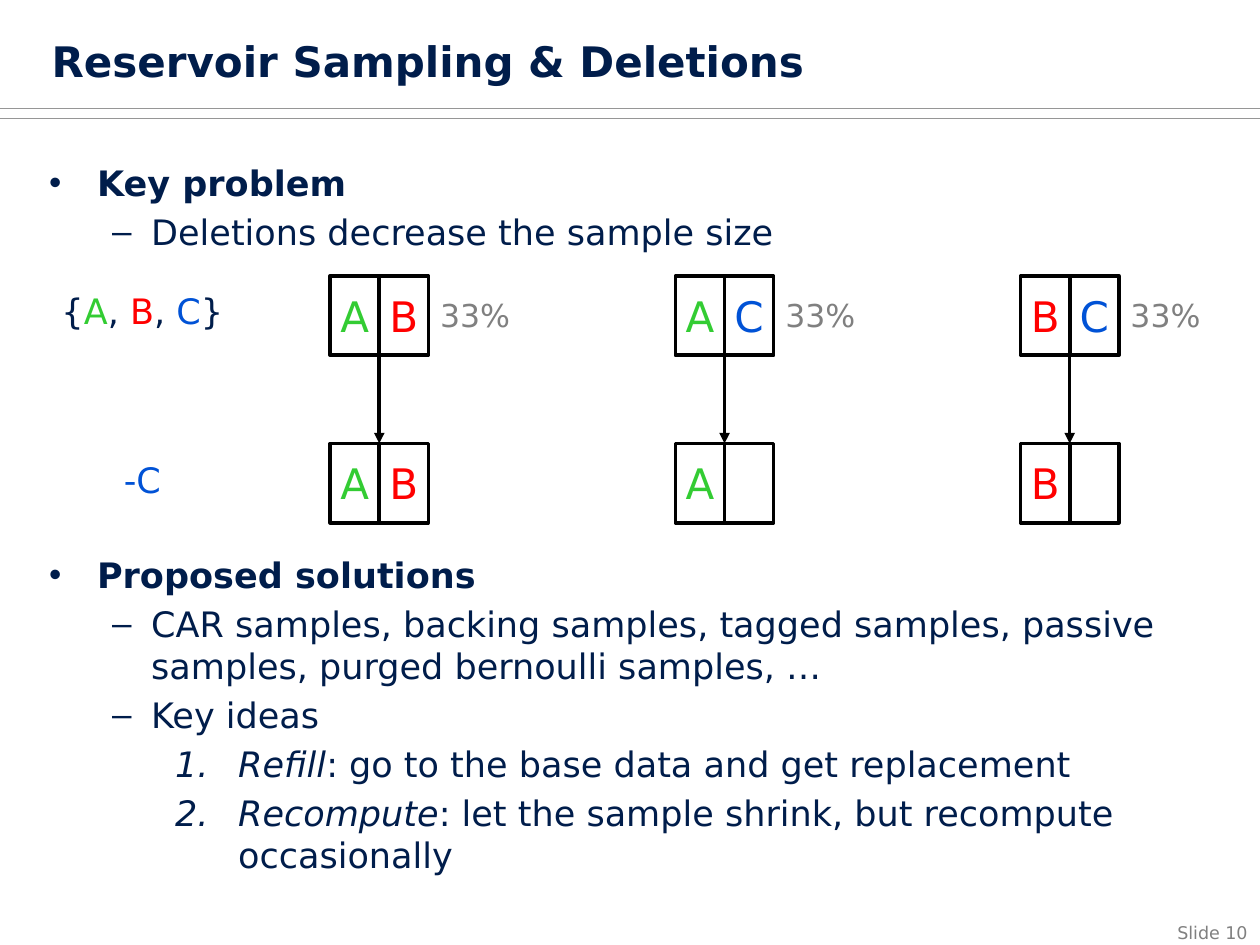
from lxml import etree
from pptx import Presentation
from pptx.dml.color import RGBColor
from pptx.enum import shapes, text
from pptx.oxml import ns
from pptx.util import Inches, Pt

FONT = "DejaVu Sans"
NAVY = RGBColor(0x00, 0x1D, 0x4B)
GREEN = RGBColor(0x33, 0xCC, 0x33)
RED = RGBColor(0xFF, 0x00, 0x00)
BLUE = RGBColor(0x00, 0x52, 0xD6)
GRAY = RGBColor(0x80, 0x80, 0x80)
RULE_GRAY = RGBColor(0x96, 0x96, 0x96)
BLACK = RGBColor(0x00, 0x00, 0x00)
WHITE = RGBColor(0xFF, 0xFF, 0xFF)
ITEM_COLORS = {"A": GREEN, "B": RED, "C": BLUE}

prs = Presentation()
prs.slide_width, prs.slide_height = Inches(10), Inches(7.5)
slide = prs.slides.add_slide(prs.slide_layouts[1])


def add_line(x1, y1, x2, y2, color, width):
    line = slide.shapes.add_connector(
        shapes.MSO_CONNECTOR.STRAIGHT, Inches(x1), Inches(y1), Inches(x2), Inches(y2))
    line.line.color.rgb = color
    line.line.width = Pt(width)
    etree.SubElement(line._element.spPr, ns.qn("a:effectLst"))
    return line


def add_label(left, top, width, height, runs, size, align, inset):
    box = slide.shapes.add_textbox(Inches(left), Inches(top), Inches(width), Inches(height))
    frame = box.text_frame
    frame.word_wrap = True
    frame.auto_size = text.MSO_AUTO_SIZE.SHAPE_TO_FIT_TEXT
    if not inset:
        frame.margin_left = frame.margin_right = frame.margin_top = frame.margin_bottom = 0
    paragraph = frame.paragraphs[0]
    paragraph.alignment = align
    paragraph.font.name, paragraph.font.size = FONT, Pt(size)
    for wording, color in runs:
        run = paragraph.add_run()
        run.text = wording
        run.font.color.rgb = color


for rule_y in (0.94, 0.86):
    add_line(0, rule_y, 10, rule_y, RULE_GRAY, 0.5)
add_label(8.83, 7.27, 1.17, 0.27, [("Slide 10", GRAY)], 10, text.PP_ALIGN.RIGHT, True)

title = slide.shapes.title
title.left, title.top, title.width, title.height = map(Inches, (0.31, 0.23, 7.19, 0.42))
title.text_frame.text = "Reservoir Sampling & Deletions"
title.text_frame.vertical_anchor = text.MSO_ANCHOR.TOP
title.text_frame.auto_size = text.MSO_AUTO_SIZE.NONE
heading = title.text_frame.paragraphs[0]
heading.alignment = text.PP_ALIGN.LEFT
heading.font.name, heading.font.size, heading.font.bold = FONT, Pt(24), True
heading.font.color.rgb = NAVY

body = slide.placeholders[1]
body.left, body.top, body.width, body.height = map(Inches, (0.29, 1.23, 9.41, 6.03))
body.text_frame.auto_size = text.MSO_AUTO_SIZE.NONE
LEVELS = [
    (0.38, 0.38, "a:buChar", {"char": "•"}),
    (0.81, 0.31, "a:buChar", {"char": "–"}),
    (1.5, 0.5, "a:buAutoNum", {"type": "arabicPeriod"}),
]
outline = [
    (0, 0, "", "Key problem"),
    (1, 4, "", "Deletions decrease the sample size"),
    (0, 172, "", "Proposed solutions"),
    (1, 4, "", "CAR samples, backing samples, tagged samples, passive samples, "
               "purged bernoulli samples, …"),
    (1, 4, "", "Key ideas"),
    (2, 4, "Refill", ": go to the base data and get replacement"),
    (2, 4, "Recompute", ": let the sample shrink, but recompute occasionally"),
]
for i, (level, gap, term, wording) in enumerate(outline):
    point = body.text_frame.paragraphs[0] if i == 0 else body.text_frame.add_paragraph()
    indent, hanging, bullet, attributes = LEVELS[level]
    point.level = level
    point.space_before = Pt(gap)
    properties = point._p.get_or_add_pPr()
    properties.set("marL", str(Inches(indent)))
    properties.set("indent", str(-Inches(hanging)))
    etree.SubElement(properties, ns.qn(bullet), attributes)
    point.font.name, point.font.size, point.font.bold = FONT, Pt(20), level == 0
    point.font.color.rgb = NAVY
    if term:
        term_run = point.add_run()
        term_run.text = term
        term_run.font.italic = True
    point.add_run().text = wording

CELL_W, CELL_H = 0.39, 0.63
BEFORE_Y, AFTER_Y = 2.19, 3.52
samples = [("AB", "AB"), ("AC", "A "), ("BC", "B ")]
for column, (before, after) in enumerate(samples):
    sample_x = 2.62 + 2.74 * column
    for row_y, items in ((BEFORE_Y, before), (AFTER_Y, after)):
        for position, item in enumerate(items):
            cell = slide.shapes.add_shape(
                shapes.MSO_SHAPE.RECTANGLE, Inches(sample_x + CELL_W * position),
                Inches(row_y), Inches(CELL_W), Inches(CELL_H))
            cell.shadow.inherit = False
            cell.line.color.rgb = BLACK
            cell.line.width = Pt(2)
            if position == 0:
                cell.fill.solid()
                cell.fill.fore_color.rgb = WHITE
            else:
                cell.fill.background()
            if item in ITEM_COLORS:
                frame = cell.text_frame
                frame.margin_left = frame.margin_right = 0
                frame.margin_top = frame.margin_bottom = 0
                frame.word_wrap = False
                frame.vertical_anchor = text.MSO_ANCHOR.MIDDLE
                frame.text = item
                letter = frame.paragraphs[0]
                letter.alignment = text.PP_ALIGN.CENTER
                letter.font.name, letter.font.size = FONT, Pt(24)
                letter.font.color.rgb = ITEM_COLORS[item]
    add_label(sample_x + 0.76, 2.35, 0.78, 0.3, [("33%", GRAY)], 18,
              text.PP_ALIGN.CENTER, False)
    arrow_x = sample_x + CELL_W
    arrow = add_line(arrow_x, BEFORE_Y + CELL_H, arrow_x, AFTER_Y, BLACK, 2)
    etree.SubElement(arrow.line._get_or_add_ln(), ns.qn("a:tailEnd"), type="triangle")

population = [(symbol, ITEM_COLORS.get(symbol, NAVY))
              for symbol in ("{", "A", ", ", "B", ", ", "C", "}")]
add_label(0.23, 2.25, 1.8, 0.44, population, 20, text.PP_ALIGN.CENTER, True)
add_label(0.23, 3.59, 1.8, 0.44, [("-C", BLUE)], 20, text.PP_ALIGN.CENTER, True)

prs.save("out.pptx")
